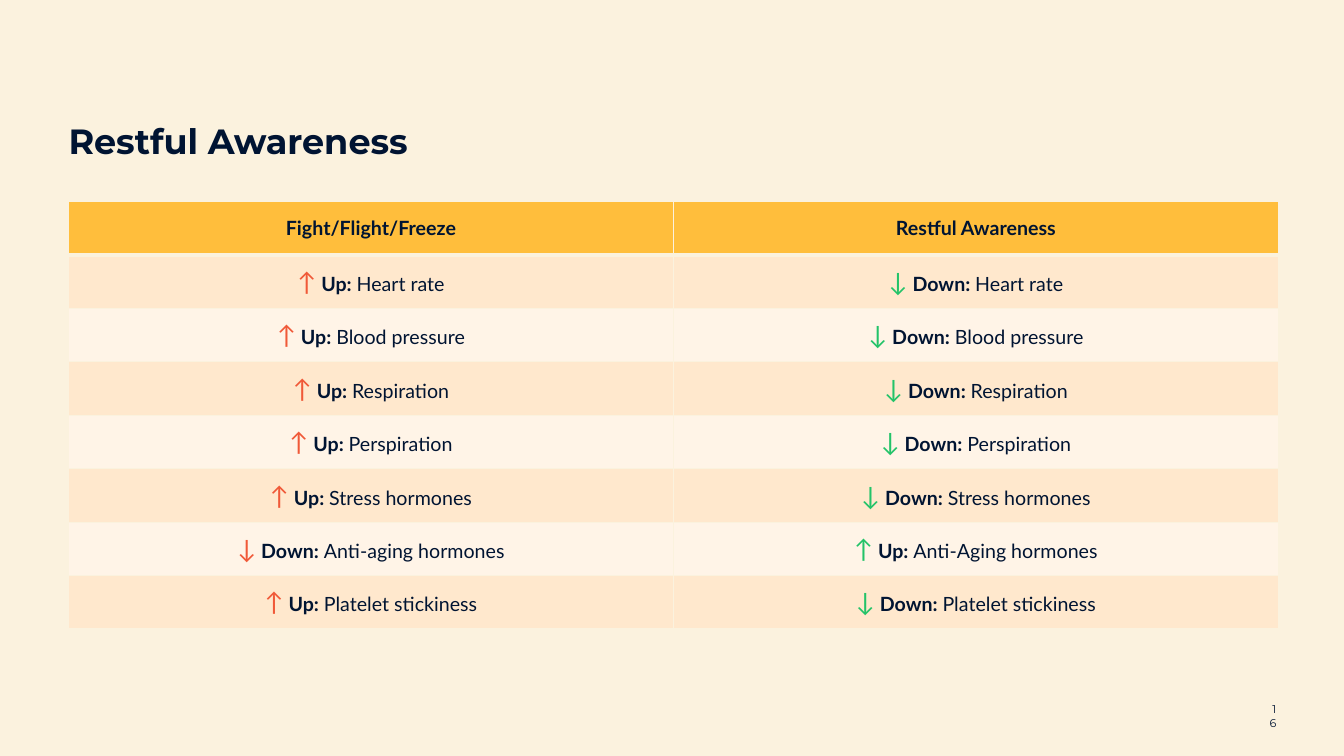
from lxml.etree import SubElement
from pptx import Presentation
from pptx.dml.color import RGBColor
from pptx.enum.text import MSO_ANCHOR, MSO_AUTO_SIZE, PP_ALIGN
from pptx.oxml.ns import qn
from pptx.util import Inches, Pt

CREAM, NAVY, AMBER = "FBF2DE", "001432", "FFBE3C"
BANDS = ("FFE8CD", "FFF4E7")
RED, GREEN = "F05938", "23C369"
ARROWS = {"Up": "↑", "Down": "↓"}
HEADINGS = ("Fight/Flight/Freeze", "Restful Awareness")
EFFECTS = (
    ("Up", "Heart rate", "Down", "Heart rate"),
    ("Up", "Blood pressure", "Down", "Blood pressure"),
    ("Up", "Respiration", "Down", "Respiration"),
    ("Up", "Perspiration", "Down", "Perspiration"),
    ("Up", "Stress hormones", "Down", "Stress hormones"),
    ("Down", "Anti-aging hormones", "Up", "Anti-Aging hormones"),
    ("Up", "Platelet stickiness", "Down", "Platelet stickiness"),
)


def color(value):
    return RGBColor.from_string(value)


class SlideBuilder:
    """Adds text and tables to one slide in a shared style."""

    heading_font = "Montserrat"
    body_font = "Lato"

    def __init__(self, slide):
        self.slide = slide
        slide.background.fill.solid()
        slide.background.fill.fore_color.rgb = color(CREAM)

    def style(self, font, name, size, bold=None):
        font.name, font.size, font.bold = name, Pt(size), bold
        font.color.rgb = color(NAVY)

    def text(self, words, left, top, width, height, size, bold=False,
             align=PP_ALIGN.LEFT, spacing=1.0, fit=MSO_AUTO_SIZE.NONE):
        frame = self.slide.shapes.add_textbox(
            Inches(left), Inches(top), Inches(width), Inches(height)).text_frame
        frame.margin_left = frame.margin_right = 0
        frame.margin_top = frame.margin_bottom = 0
        frame.word_wrap, frame.auto_size = True, fit
        paragraph = frame.paragraphs[0]
        paragraph.text = words
        paragraph.alignment, paragraph.line_spacing = align, spacing
        self.style(paragraph.font, self.heading_font, size, bold)

    def table(self, rows, columns, left, top, width, height):
        return self.slide.shapes.add_table(
            rows, columns, Inches(left), Inches(top),
            Inches(width), Inches(height)).table

    def cell(self, cell, fill, top_rule=1, bottom_rule=1):
        properties = cell._tc.get_or_add_tcPr()
        rules = {"a:lnL": 1, "a:lnR": 1, "a:lnT": top_rule, "a:lnB": bottom_rule}
        for tag, points in rules.items():
            rule = SubElement(properties, qn(tag), w=str(Pt(points)))
            SubElement(SubElement(rule, qn("a:solidFill")), qn("a:srgbClr"), val=CREAM)
        cell.fill.solid()
        cell.fill.fore_color.rgb = color(fill)
        cell.vertical_anchor = MSO_ANCHOR.MIDDLE
        paragraph = cell.text_frame.paragraphs[0]
        paragraph.alignment = PP_ALIGN.CENTER
        return paragraph

    def heading(self, cell, words):
        paragraph = self.cell(cell, AMBER, bottom_rule=3)
        paragraph.text = words
        self.style(paragraph.font, self.body_font, 14, True)

    def effect(self, cell, direction, topic, arrow_color, fill, top_rule):
        paragraph = self.cell(cell, fill, top_rule)
        parts = ((ARROWS[direction], 18, False), (" ", 14, False),
                 (f"{direction}: ", 14, True), (topic, 14, False))
        for words, size, bold in parts:
            run = paragraph.add_run()
            run.text = words
            self.style(run.font, self.body_font, size, bold)
        paragraph.runs[0].font.color.rgb = color(arrow_color)


def main():
    deck = Presentation()
    deck.slide_width, deck.slide_height = Inches(13.33), Inches(7.5)
    builder = SlideBuilder(deck.slides.add_slide(deck.slide_layouts[6]))
    builder.text("16", 12.59, 6.97, 0.07, 0.13, 8, align=PP_ALIGN.RIGHT,
                 fit=MSO_AUTO_SIZE.SHAPE_TO_FIT_TEXT)
    builder.text("Restful Awareness", 0.68, 1.1, 11, 0.79, 25, True, spacing=1.2)
    comparison = builder.table(len(EFFECTS) + 1, len(HEADINGS), 0.68, 2, 12, 4.24)
    for column, words in enumerate(HEADINGS):
        builder.heading(comparison.cell(0, column), words)
    for row, (stress, stress_topic, rest, rest_topic) in enumerate(EFFECTS, 1):
        fill = BANDS[(row - 1) % 2]
        top_rule = 3 if row == 1 else 1
        builder.effect(comparison.cell(row, 0), stress, stress_topic, RED, fill, top_rule)
        builder.effect(comparison.cell(row, 1), rest, rest_topic, GREEN, fill, top_rule)
    deck.save("out.pptx")


if __name__ == "__main__":
    main()
